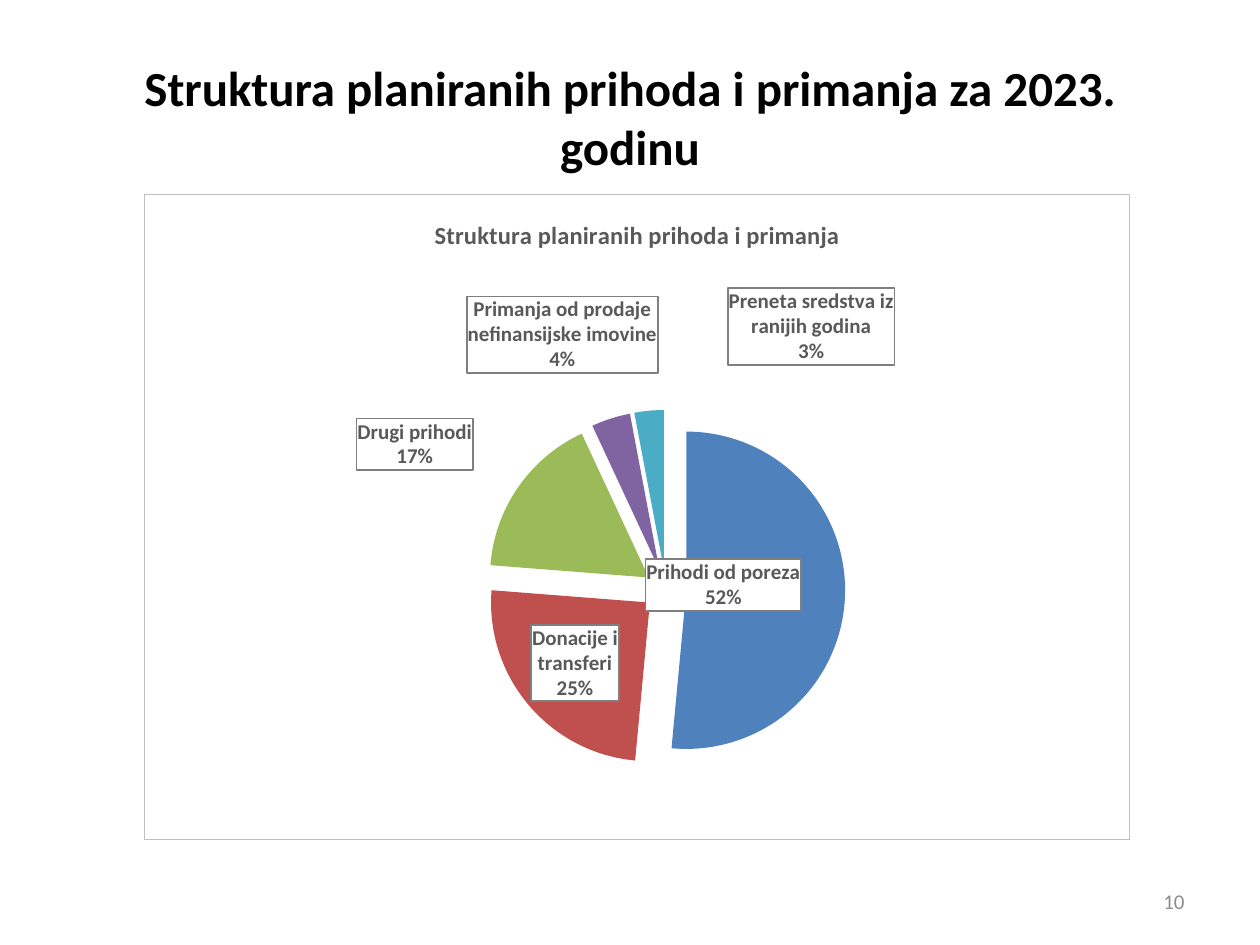
from copy import deepcopy

from lxml.etree import SubElement
from pptx import Presentation
from pptx.chart.data import CategoryChartData
from pptx.dml.color import RGBColor
from pptx.enum.chart import XL_CHART_TYPE as ChartType, XL_LABEL_POSITION as LabelPosition
from pptx.enum.text import MSO_ANCHOR as Anchor, PP_ALIGN as Align
from pptx.oxml import parse_xml
from pptx.oxml.ns import nsdecls, qn
from pptx.util import Cm, Pt

BLACK = RGBColor(0x00, 0x00, 0x00)
LABEL_GRAY = RGBColor(0x59, 0x59, 0x59)
NUMBER_GRAY = RGBColor(0x8C, 0x8C, 0x8C)
FONT = "Calibri"
EXPLOSION = 13

REVENUES = [
    ("Prihodi od poreza", 52, RGBColor(0x4F, 0x81, 0xBD)),
    ("Donacije i transferi", 25, RGBColor(0xC0, 0x50, 0x4D)),
    ("Drugi prihodi", 17, RGBColor(0x9B, 0xBB, 0x59)),
    ("Primanja od prodaje nefinansijske imovine", 4, RGBColor(0x80, 0x64, 0xA2)),
    ("Preneta sredstva iz ranijih godina", 3, RGBColor(0x4B, 0xAC, 0xC6)),
]
LABEL_OFFSETS = {0: (-0.21, -0.02), 2: (-0.04, -0.02), 3: (0.05, -0.06), 4: (0.25, -0.06)}


def style_font(font, size, color, bold=False):
    font.name = FONT
    font.size = Pt(size)
    font.bold = bold
    font.color.rgb = color


def outlined(color, width, fill):
    return parse_xml(
        f'<c:spPr {nsdecls("c", "a")}><a:solidFill><a:srgbClr val="{fill}"/></a:solidFill>'
        f'<a:ln w="{Pt(width)}"><a:solidFill><a:srgbClr val="{color}"/></a:solidFill></a:ln></c:spPr>'
    )


def manual_layout(**settings):
    layout = parse_xml(f'<c:layout {nsdecls("c")}><c:manualLayout/></c:layout>')
    for name, value in settings.items():
        SubElement(layout[0], qn(f"c:{name}")).set("val", str(value))
    return layout


def replace_layout(parent, layout, index):
    for old in parent.findall(qn("c:layout")):
        parent.remove(old)
    parent.insert(index, layout)


def format_labels(series):
    labels = series.data_labels
    labels.show_value = True
    labels.show_category_name = True
    labels.show_percentage = False
    labels.number_format = '0"%"'
    labels.number_format_is_linked = False
    labels.position = LabelPosition.BEST_FIT
    style_font(labels.font, 12, LABEL_GRAY, True)

    group = series._element.find(qn("c:dLbls"))
    group.find(qn("c:txPr")).addprevious(outlined("7F7F7F", 1, "FFFFFF"))
    for leader in group.findall(qn("c:showLeaderLines")):
        group.remove(leader)
    separator = parse_xml(f'<c:separator {nsdecls("c")}>\n</c:separator>')
    group.find(qn("c:showBubbleSize")).addnext(separator)

    shared = [deepcopy(part) for part in group]
    for place, (index, (dx, dy)) in enumerate(LABEL_OFFSETS.items()):
        label = parse_xml(f'<c:dLbl {nsdecls("c")}><c:idx val="{index}"/></c:dLbl>')
        label.append(manual_layout(x=dx, y=dy))
        label.extend(deepcopy(shared))
        group.insert(place, label)
    SubElement(group, qn("c:showLeaderLines")).set("val", "0")


def explode_slices(series):
    explosion = parse_xml(f'<c:explosion {nsdecls("c")} val="{EXPLOSION}"/>')
    slices = series._element.findall(qn("c:dPt"))
    slices[0].addprevious(deepcopy(explosion))
    for slice_part in slices:
        slice_part.find(qn("c:spPr")).addprevious(deepcopy(explosion))


def add_revenue_pie(slide, left, top, width, height):
    data = CategoryChartData(number_format="General")
    data.categories = [name for name, _, _ in REVENUES]
    data.add_series("Series 1", [share for _, share, _ in REVENUES])
    chart = slide.shapes.add_chart(ChartType.PIE, left, top, width, height, data).chart
    style_font(chart.font, 10, BLACK)
    chart.has_legend = False

    heading = chart.chart_title.text_frame
    heading.text = "Struktura planiranih prihoda i primanja"
    style_font(heading.paragraphs[0].runs[0].font, 14, LABEL_GRAY, True)
    chart.chart_title.include_in_layout = False
    replace_layout(chart.chart_title._element,
                   manual_layout(xMode="edge", yMode="edge", x=0.29, y=0.03), 1)

    plot = chart.plots[0]
    plot.vary_by_categories = True
    replace_layout(plot._element.getparent(),
                   manual_layout(layoutTarget="inner", xMode="edge", yMode="edge",
                                 x=0.215, y=0.334, w=0.628, h=0.556), 0)

    series = plot.series[0]
    for index, (_, _, color) in enumerate(REVENUES):
        fill = series.points[index].format.fill
        fill.solid()
        fill.fore_color.rgb = color
    explode_slices(series)
    format_labels(series)

    chart_space = chart._chartSpace
    chart_space.find(qn("c:chart")).addnext(outlined("BFBFBF", 0.75, "FFFFFF"))


def place_title(slide, left, top, width, height):
    title = slide.shapes.title
    title.left, title.top, title.width, title.height = left, top, width, height
    frame = title.text_frame
    frame.text = "Struktura planiranih prihoda i primanja za 2023. godinu"
    frame.vertical_anchor = Anchor.MIDDLE
    frame.paragraphs[0].alignment = Align.CENTER
    style_font(frame.paragraphs[0].runs[0].font, 28, BLACK, True)


def add_page_number(slide, left, top, width, height):
    frame = slide.shapes.add_textbox(left, top, width, height).text_frame
    frame.word_wrap = True
    frame.vertical_anchor = Anchor.MIDDLE
    frame.text = "10"
    frame.paragraphs[0].alignment = Align.RIGHT
    style_font(frame.paragraphs[0].runs[0].font, 12, NUMBER_GRAY)


def main():
    deck = Presentation()
    deck.slide_width, deck.slide_height = Cm(25.4), Cm(19.05)
    slide = deck.slides.add_slide(deck.slide_layouts.get_by_name("Title Only"))
    place_title(slide, Cm(1.27), Cm(0.76), Cm(22.86), Cm(3.18))
    add_revenue_pie(slide, Cm(2.9), Cm(3.91), Cm(19.89), Cm(13.03))
    add_page_number(slide, Cm(18.21), Cm(17.65), Cm(5.92), Cm(1.02))
    deck.save("out.pptx")


if __name__ == "__main__":
    main()
